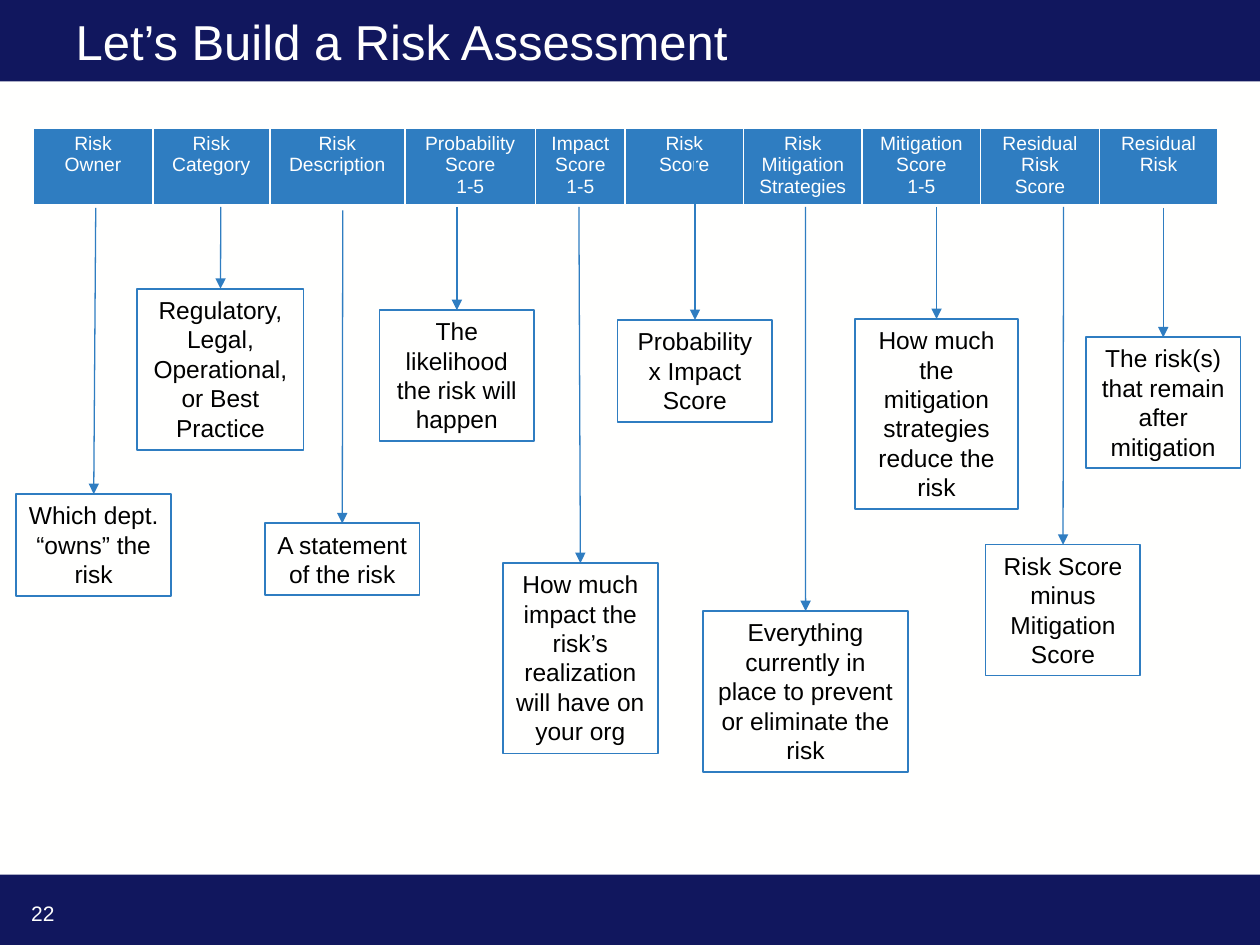
import lxml.etree
import pptx
import pptx.dml.color
import pptx.enum.shapes
import pptx.enum.text
import pptx.oxml
import pptx.oxml.ns
import pptx.util

Cm = pptx.util.Cm
Pt = pptx.util.Pt
RGBColor = pptx.dml.color.RGBColor
ALIGN = pptx.enum.text.PP_ALIGN
ANCHOR = pptx.enum.text.MSO_ANCHOR
AUTO_SIZE = pptx.enum.text.MSO_AUTO_SIZE
RECTANGLE = pptx.enum.shapes.MSO_SHAPE.RECTANGLE
STRAIGHT = pptx.enum.shapes.MSO_CONNECTOR.STRAIGHT
qn = pptx.oxml.ns.qn

NAVY = RGBColor(0x11, 0x17, 0x5E)
BLUE = RGBColor(0x2F, 0x7D, 0xC1)
WHITE = RGBColor(0xFF, 0xFF, 0xFE)
BLACK = RGBColor(0, 0, 0)


def add_span(para, text, size, color):
    span = para.add_run()
    span.text = text
    span.font.name = "Arial"
    span.font.size = Pt(size)
    span.font.bold = False
    span.font.color.rgb = color


def set_border(cell, side, width):
    """Draw one side (L, R, T or B) of a cell in white; width in points."""
    border = pptx.oxml.parse_xml(
        f'<a:ln{side} xmlns:a="http://schemas.openxmlformats.org/drawingml/2006/main" '
        f'w="{Pt(width)}"><a:solidFill><a:srgbClr val="{WHITE}"/></a:solidFill></a:ln{side}>')
    cell._tc.get_or_add_tcPr().append(border)


deck = pptx.Presentation()
deck.slide_width = Cm(25.4)
deck.slide_height = Cm(19.05)
page = deck.slides.add_slide(deck.slide_layouts[5])
page.background.fill.solid()
page.background.fill.fore_color.rgb = WHITE

# Header and footer bars, behind the title
for top, height in [(0, 1.64), (17.63, 1.42)]:
    bar = page.shapes.add_shape(RECTANGLE, 0, Cm(top), deck.slide_width, Cm(height))
    bar.shadow.inherit = False
    bar.fill.solid()
    bar.fill.fore_color.rgb = NAVY
    bar.line.fill.background()
    page.shapes._spTree.insert(2, bar._element)

title = page.shapes.title
title.left, title.top, title.width, title.height = Cm(1.27), Cm(0.32), Cm(22.86), Cm(1.02)
title.text_frame.auto_size = AUTO_SIZE.NONE
title.text_frame.vertical_anchor = ANCHOR.MIDDLE
para = title.text_frame.paragraphs[0]
para.alignment = ALIGN.LEFT
add_span(para, "Let’s Build a Risk Assessment", 28, WHITE)

number_box = page.shapes.add_textbox(Cm(0.38), Cm(18.03), Cm(6.83), Cm(1.02))
number_box.text_frame.word_wrap = True
add_span(number_box.text_frame.paragraphs[0], "22", 12, WHITE)

# Columns of the assessment: heading lines and width
columns = [
    (["Risk Owner"], 2.41),
    (["Risk Category"], 2.36),
    (["Risk Description"], 2.72),
    (["Probability Score", "1-5"], 2.64),
    (["Impact Score", "1-5"], 1.8),
    (["Risk Score"], 2.39),
    (["Risk Mitigation Strategies"], 2.39),
    (["Mitigation Score", "1-5"], 2.39),
    (["Residual Risk Score"], 2.39),
    (["Residual Risk"], 2.39),
]
table = page.shapes.add_table(
    1, len(columns), Cm(0.67), Cm(2.59), Cm(23.88), Cm(1.53)).table
for index, (lines, width) in enumerate(columns):
    table.columns[index].width = Cm(width)
    cell = table.cell(0, index)
    cell.margin_left = cell.margin_right = Cm(0.28)
    cell.margin_top = cell.margin_bottom = Cm(0.09)
    for side, border_width in [("L", 1), ("R", 1), ("T", 1), ("B", 3)]:
        set_border(cell, side, border_width)
    cell.fill.solid()
    cell.fill.fore_color.rgb = BLUE
    para = cell.text_frame.paragraphs[0]
    para.alignment = ALIGN.CENTER
    for line_index, line in enumerate(lines):
        if line_index:
            para.add_line_break()
        add_span(para, line, 11, WHITE)

# Explanations: text, box (left, top, width, height), arrow start (x, y)
explanations = [
    ("Which dept. “owns” the risk", (0.33, 9.96, 3.12, 2.06), (1.93, 4.19)),
    ("Regulatory, Legal, Operational, or Best Practice",
     (2.77, 5.82, 3.35, 3.25), (4.45, 4.17)),
    ("A statement of the risk", (5.34, 10.55, 3.12, 1.45), (6.91, 4.24)),
    ("The likelihood the risk will happen", (7.65, 6.25, 3.12, 2.64), (9.21, 4.17)),
    ("How much impact the risk’s realization will have on your org",
     (10.14, 11.35, 3.12, 3.84), (11.67, 4.17)),
    ("Probability x Impact Score", (12.45, 6.45, 3.12, 2.06), (14.01, 2.97)),
    ("Everything currently in place to prevent or eliminate the risk",
     (14.17, 12.32, 4.14, 3.25), (16.24, 4.17)),
    ("How much the mitigation strategies reduce the risk",
     (17.23, 6.43, 3.3, 3.84), (18.88, 4.17)),
    ("Risk Score minus Mitigation Score", (19.87, 10.98, 3.12, 2.64), (21.44, 4.17)),
    ("The risk(s) that remain after mitigation",
     (21.89, 6.8, 3.12, 2.64), (23.45, 4.19)),
]
for text, frame, start in explanations:
    box = page.shapes.add_shape(RECTANGLE, *map(Cm, frame))
    box.shadow.inherit = False
    box.fill.background()
    box.line.color.rgb = BLUE
    box.line.width = Pt(1)
    box.text_frame.word_wrap = True
    box.text_frame.auto_size = AUTO_SIZE.SHAPE_TO_FIT_TEXT
    box.text_frame.vertical_anchor = ANCHOR.TOP
    para = box.text_frame.paragraphs[0]
    para.alignment = ALIGN.CENTER
    add_span(para, text, 14, BLACK)

    x, y = map(Cm, start)
    arrow = page.shapes.add_connector(STRAIGHT, x, y, x, box.top)
    arrow.end_connect(box, 0)
    arrow.line.color.rgb = BLUE
    arrow.line.width = Pt(0.75)
    line_xml = arrow.line._get_or_add_ln()
    lxml.etree.SubElement(line_xml, qn("a:tailEnd"), type="triangle")
    lxml.etree.SubElement(arrow._element.spPr, qn("a:effectLst"))

deck.save("out.pptx")
